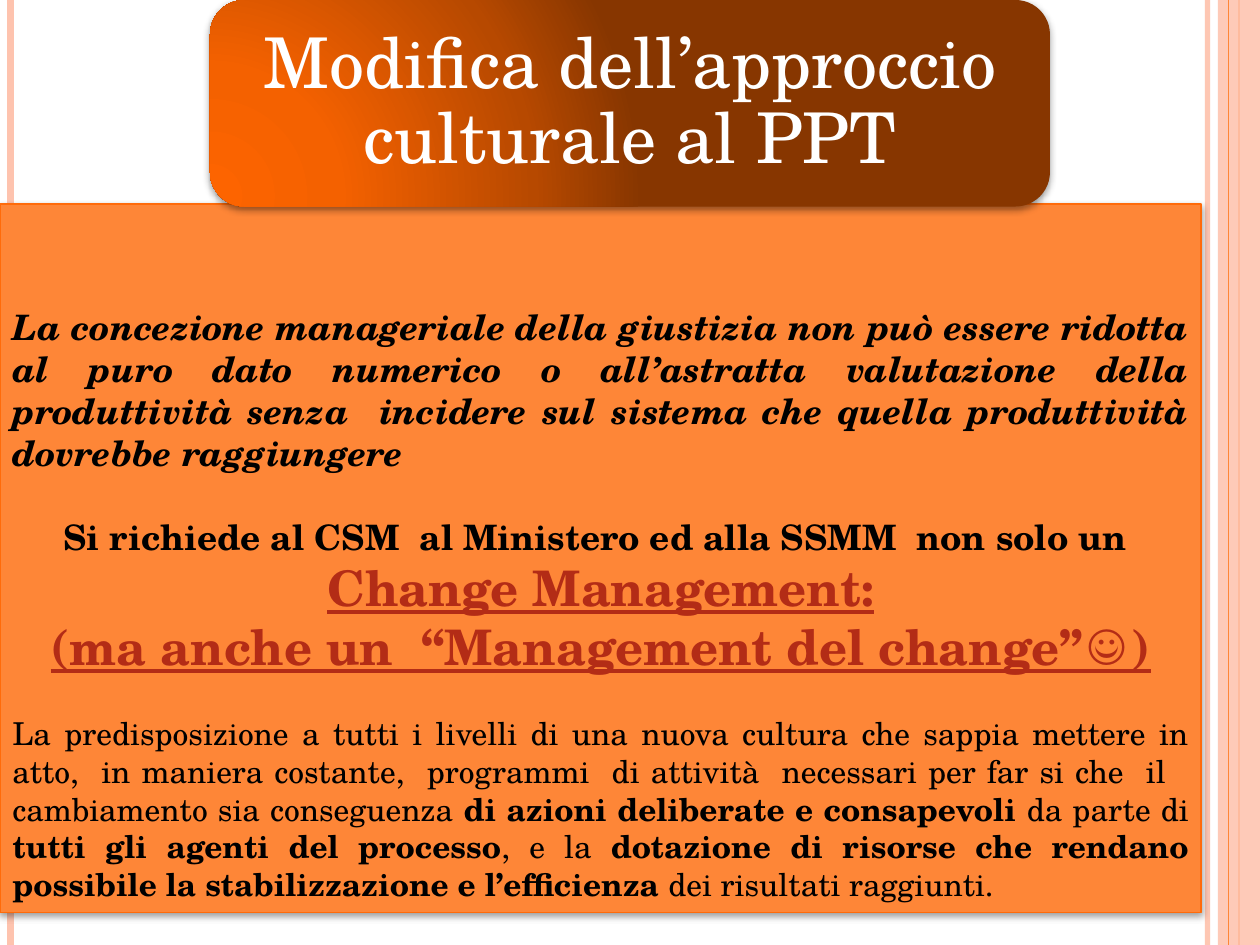
from lxml import etree
from pptx import Presentation
from pptx.dml.color import RGBColor
from pptx.enum.shapes import MSO_CONNECTOR, MSO_SHAPE
from pptx.enum.text import MSO_ANCHOR, PP_ALIGN
from pptx.oxml.ns import qn
from pptx.util import Pt

STRAIGHT = MSO_CONNECTOR.STRAIGHT
RECT, ROUND_RECT = MSO_SHAPE.RECTANGLE, MSO_SHAPE.ROUNDED_RECTANGLE
TOP, MIDDLE = MSO_ANCHOR.TOP, MSO_ANCHOR.MIDDLE
CENTER, JUSTIFY = PP_ALIGN.CENTER, PP_ALIGN.JUSTIFY

WIDTH, HEIGHT = 720, 540
FONT = "TeX Gyre Schola"
COLORS = {
    "pink": "FEC3AE", "orange": "FE8637", "edge": "FF6B0A", "red": "B32C16",
    "black": "000000", "white": "FFFFFF",
}
TITLE_STOPS = [(0, "FD6400"), (30, "F46100"), (75, "B74900"), (100, "873600")]

CONCEPT = (
    "La concezione manageriale della giustizia non può essere ridotta al puro dato "
    "numerico o all’astratta valutazione della produttività senza  incidere sul sistema "
    "che quella produttività dovrebbe raggiungere "
)
# Text and whether it is bold
CULTURE = [
    ("La predisposizione a tutti i livelli di una nuova cultura che sappia mettere in "
     "atto,  in maniera costante,  programmi  di attività  necessari per far si che  il   "
     "cambiamento sia conseguenza ", False),
    ("di azioni deliberate e consapevoli ", True),
    ("da parte di ", False),
    ("tutti gli agenti del processo", True),
    (", e la ", False),
    ("dotazione di risorse che rendano possibile la stabilizzazione e l’efficienza ", True),
    ("dei risultati raggiunti.  ", False),
]


def rgb(name):
    return RGBColor.from_string(COLORS[name])


def add_element(parent, tag, **attrs):
    return etree.SubElement(parent, qn(tag), {k: str(v) for k, v in attrs.items()})


def set_alpha(parent, percent):
    """Make the colour found inside an element partly transparent."""
    color = next(parent.iter(qn("a:srgbClr")))
    add_element(color, "a:alpha", val=percent * 1000)


def add_rule(s, x, color, width, alpha=100):
    """Vertical line over the full slide height."""
    line = s.shapes.add_connector(STRAIGHT, Pt(x), 0, Pt(x), Pt(HEIGHT))
    line.line.color.rgb = rgb(color)
    line.line.width = Pt(width)
    if alpha < 100:
        set_alpha(line.line._ln, alpha)
    add_element(line._element.spPr, "a:effectLst")


def add_box(s, kind, x, y, w, h, color=None):
    sp = s.shapes.add_shape(kind, Pt(x), Pt(y), Pt(w), Pt(h))
    sp.shadow.inherit = False
    sp.line.fill.background()
    if color:
        sp.fill.solid()
        sp.fill.fore_color.rgb = rgb(color)
    return sp


def add_shadow(sp, alpha, blur, dist):
    """Soft black shadow straight below the shape."""
    effects = sp._element.spPr.find(qn("a:effectLst"))
    shadow = add_element(effects, "a:outerShdw", blurRad=Pt(blur), dist=Pt(dist),
                         dir=90 * 60000, rotWithShape=0)
    add_element(shadow, "a:srgbClr", val=COLORS["black"])
    set_alpha(shadow, alpha)


def fill_radial(sp, stops, l, t, r, b):
    """Circular gradient around a focus rectangle given in percent."""
    sp.fill.gradient()
    grad = sp._element.spPr.find(qn("a:gradFill"))
    for child in list(grad):
        grad.remove(child)
    stop_list = add_element(grad, "a:gsLst")
    for pos, color in stops:
        stop = add_element(stop_list, "a:gs", pos=pos * 1000)
        add_element(stop, "a:srgbClr", val=color)
    circle = add_element(grad, "a:path", path="circle")
    add_element(circle, "a:fillToRect", l=l * 1000, t=t * 1000, r=r * 1000, b=b * 1000)


def setup_text(sp, anchor):
    tf = sp.text_frame
    tf.word_wrap = True
    tf.vertical_anchor = anchor
    return tf


def add_text(tf, runs, size, color, align, before=0, bold=None, italic=None, underline=None):
    """Fill the first empty paragraph or append one; runs are (text, bold) pairs."""
    first = tf.paragraphs[0]
    p = tf.add_paragraph() if first.runs else first
    p.alignment = align
    p.space_before = Pt(before)
    f = p.font
    f.name, f.size, f.color.rgb = FONT, Pt(size), rgb(color)
    f.bold, f.italic, f.underline = bold, italic, underline
    for text, run_bold in runs:
        r = p.add_run()
        r.text = text
        if run_bold is not None:
            r.font.bold = run_bold
    return p


def add_background(s):
    add_rule(s, 690, "pink", 3, alpha=93)
    add_rule(s, 6, "pink", 4.5)
    add_rule(s, 708, "orange", 1.5)
    band = add_box(s, RECT, 696, 0, 24, HEIGHT, "pink")
    set_alpha(band._element.spPr, 87)
    add_rule(s, 702, "orange", 0.75)


def add_body(s):
    sp = add_box(s, RECT, 0, 116.7, 686.5, 404.8, "orange")
    sp.line.color.rgb = rgb("edge")
    sp.line.width = Pt(1)
    add_shadow(sp, 40, 4, 2)
    tf = setup_text(sp, TOP)
    tf.margin_top = Pt(58)
    add_text(tf, [(CONCEPT, None)], 20, "black", JUSTIFY, bold=True, italic=True)
    add_text(tf, [("Si richiede al CSM  al Ministero ed alla SSMM  non solo un ", None)],
             20, "black", CENTER, before=24, bold=True)
    for text in ("Change Management:", "(ma anche un  “Management del change”☺)"):
        add_text(tf, [(text, None)], 28, "red", CENTER, bold=True, underline=True)
    add_text(tf, CULTURE, 18, "black", JUSTIFY, before=22)


def add_title(s):
    sp = add_box(s, ROUND_RECT, 120, 0, 480, 118)
    fill_radial(sp, TITLE_STOPS, 5, 100, 120, 10)
    add_shadow(sp, 42, 4, 1.6)
    tf = setup_text(sp, MIDDLE)
    tf.margin_left = tf.margin_right = tf.margin_top = tf.margin_bottom = Pt(12)
    p = add_text(tf, [("Modifica dell’approccio culturale al PPT", None)], 40, "white", CENTER)
    p.line_spacing = 0.9


def main():
    prs = Presentation()
    prs.slide_width, prs.slide_height = Pt(WIDTH), Pt(HEIGHT)
    s = prs.slides.add_slide(prs.slide_layouts[6])
    add_background(s)
    add_body(s)
    add_title(s)
    prs.save("out.pptx")


if __name__ == "__main__":
    main()
